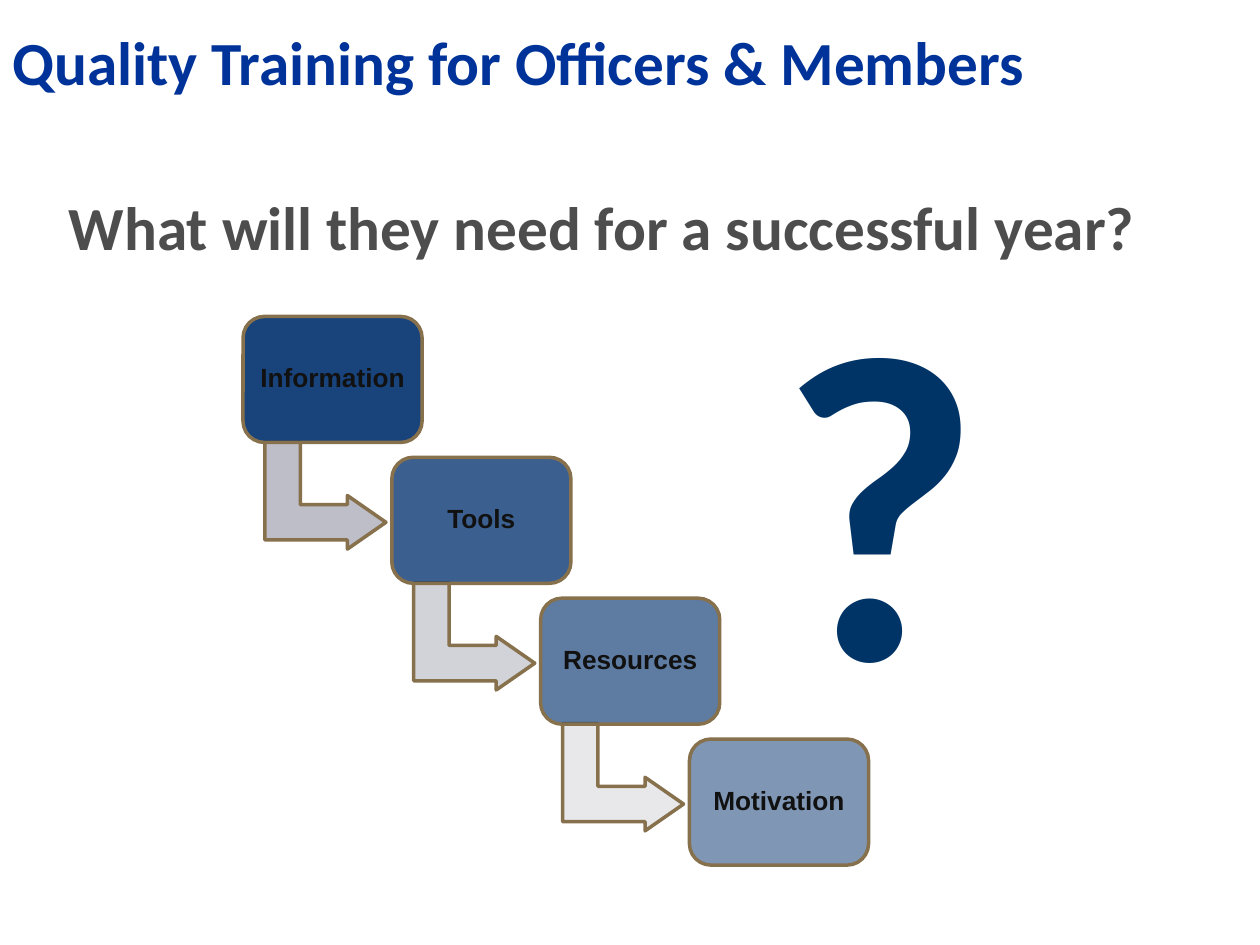
import pptx
import pptx.util
import pptx.dml.color
import pptx.enum.shapes
import pptx.enum.text
import pptx.oxml.ns
import lxml.etree

Cm, Pt = pptx.util.Cm, pptx.util.Pt
KIND = pptx.enum.shapes.MSO_SHAPE
HUES = {
    "title": "003399", "lead": "4D4D4D", "mark": "003366",
    "step": "002F6D", "edge": "87714D", "label": "111111",
    "dark": "BDBEC8", "mid": "D2D3D9", "light": "E8E8EB",
}


class Deck:
    """Holds the style and the current slide, and draws each kind of element."""

    def __init__(self, wide, high):
        self.file = pptx.Presentation()
        self.file.slide_width, self.file.slide_height = Cm(wide), Cm(high)
        self.slide = self.file.slides.add_slide(self.file.slide_layouts[6])

    def color(self, name):
        return pptx.dml.color.RGBColor.from_string(HUES[name])

    def run(self, para, text, face, size, hue):
        run = para.add_run()
        run.text = text
        run.font.name, run.font.size, run.font.bold = face, Pt(size), True
        run.font.color.rgb = self.color(hue)

    def inset(self, frame, gap):
        frame.margin_left = frame.margin_right = Cm(gap)
        frame.margin_top = frame.margin_bottom = Cm(gap)

    def text(self, area, text, size, hue, lead=None, gap=None):
        frame = self.slide.shapes.add_textbox(*map(Cm, area)).text_frame
        frame.word_wrap = True
        frame.auto_size = pptx.enum.text.MSO_AUTO_SIZE.SHAPE_TO_FIT_TEXT
        if gap is not None:
            self.inset(frame, gap)
        para = frame.paragraphs[0]
        if lead:
            para.line_spacing = Pt(lead)
        self.run(para, text, "Calibri", size, hue)

    def shape(self, kind, area, fill, sizes):
        item = self.slide.shapes.add_shape(kind, *map(Cm, area))
        item.shadow.inherit = False
        item.fill.solid()
        item.fill.fore_color.rgb = self.color(fill)
        item.line.color.rgb = self.color("edge")
        item.line.width = Pt(2)
        for i, size in enumerate(sizes):
            item.adjustments[i] = size
        return item

    def arrow(self, area, fill):
        item = self.shape(KIND.BENT_UP_ARROW, area, fill, (0.33, 0.25, 0.36))
        item.rotation = 90

    def step(self, area, text, alpha):
        item = self.shape(KIND.ROUNDED_RECTANGLE, area, "step", (0.17,))
        tone = item.element.spPr.find(".//" + pptx.oxml.ns.qn("a:srgbClr"))
        node = lxml.etree.SubElement(tone, pptx.oxml.ns.qn("a:alpha"))
        node.set("val", str(alpha * 1000))
        frame = item.text_frame
        frame.word_wrap = True
        frame.vertical_anchor = pptx.enum.text.MSO_ANCHOR.MIDDLE
        self.inset(frame, 0.15)
        para = frame.paragraphs[0]
        para.alignment = pptx.enum.text.PP_ALIGN.CENTER
        para.line_spacing = 0.9
        self.run(para, text, "Arial", 15, "label")


def main():
    deck = Deck(25.4, 19.05)
    deck.text((0, 0.36, 23.11, 1.8), "Quality Training for Officers & Members", 35, "title")
    deck.text((1.14, 3.73, 23.11, 1.73), "What will they need for a successful year?",
              35, "lead", lead=41)
    steps = [("Information", 90, "dark"), ("Tools", 77, "mid"),
             ("Resources", 63, "light"), ("Motivation", 50, None)]
    for i, (name, alpha, tint) in enumerate(steps):
        left, top = 4.9 + 3 * i, 6.38 + 2.84 * i
        if tint:
            deck.arrow((left + 0.58, top + 2.39, 2.16, 2.44), tint)
        deck.step((left, top, 3.61, 2.54), name, alpha)
    deck.text((15.57, 4.37, 5.08, 10.95), "?", 250, "mark", gap=0.13)
    deck.file.save("out.pptx")


if __name__ == "__main__":
    main()
